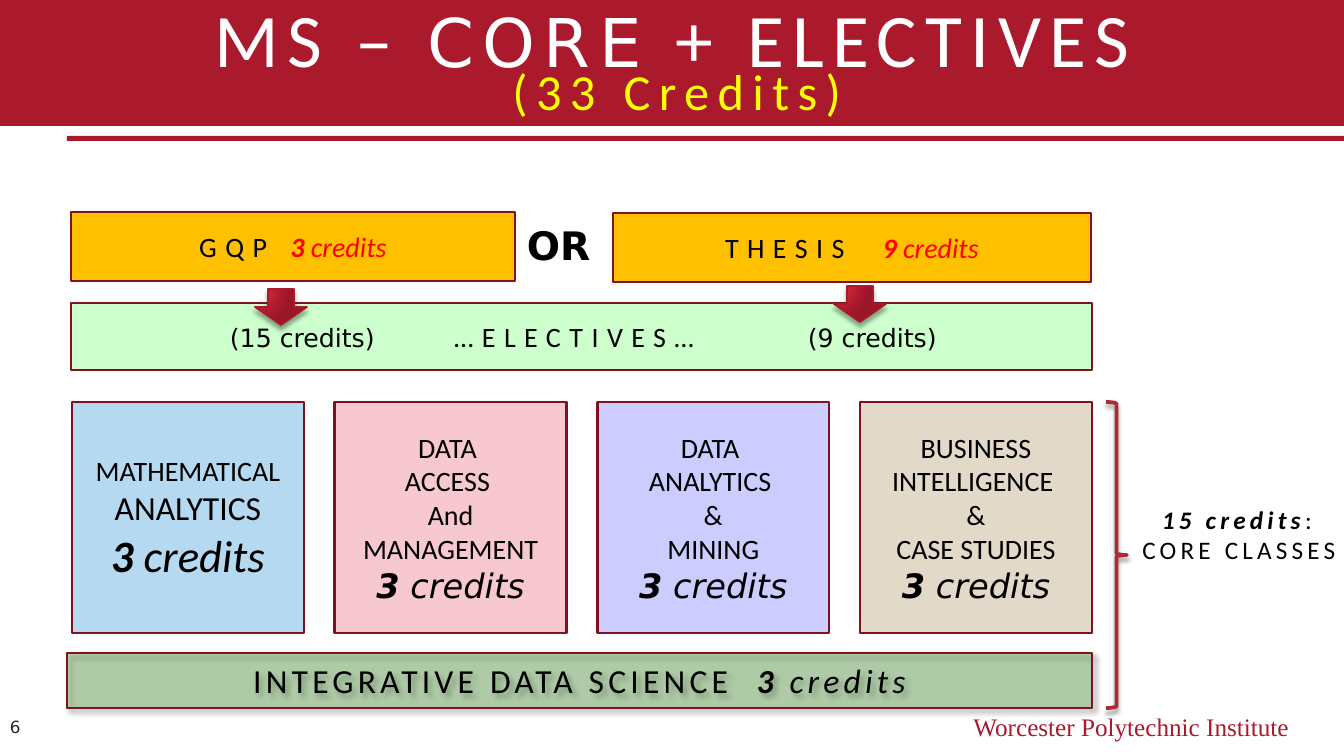
import pptx
import pptx.dml.color
import pptx.enum.shapes
import pptx.enum.text
import pptx.oxml
import pptx.oxml.ns
import pptx.util

RGB = pptx.dml.color.RGBColor
SHAPE = pptx.enum.shapes.MSO_SHAPE
ALIGN = pptx.enum.text.PP_ALIGN
ANCHOR = pptx.enum.text.MSO_ANCHOR
qn = pptx.oxml.ns.qn

CRIMSON = RGB(0xAB, 0x19, 0x2D)
MAROON = RGB(0x7F, 0x12, 0x21)
BRACE_RED = RGB(0xAC, 0x2B, 0x37)
RED = RGB(0xFF, 0x00, 0x00)
YELLOW = RGB(0xFF, 0xFF, 0x00)
AMBER = RGB(0xFF, 0xC0, 0x00)
MINT = RGB(0xCC, 0xFF, 0xCC)
GREEN = RGB(0x28, 0x8B, 0x0D)
SKY = RGB(0xB5, 0xD9, 0xF1)
PINK = RGB(0xF7, 0xC8, 0xCF)
LILAC = RGB(0xCC, 0xCC, 0xFF)
SAND = RGB(0xE2, 0xD9, 0xC9)
BLACK = RGB(0x00, 0x00, 0x00)
WHITE = RGB(0xFF, 0xFF, 0xFF)
GREY = RGB(0x26, 0x26, 0x26)

SANS, WIDE, SERIF = "Calibri", "DejaVu Sans", "Times New Roman"
PX = 914400 / 100.8
SLIDE_W, SLIDE_H = 1344, 756


def run(text, size, font=SANS, color=BLACK, style="", spacing=0):
    """Describe one run; style holds b for bold and i for italic."""
    return text, size, font, color, style, spacing


def credits(number, size, font=SANS, color=BLACK, spacing=0):
    return [run(number, size, font, color, "bi", spacing),
            run(" credits", size, font, color, "i", spacing)]


# Each text is a list of paragraphs, each paragraph a list of runs.
TITLE = [[run("MS – ", 54, SANS, WHITE, "", 6),
          run("CORE", 48, WIDE, WHITE, "", 6),
          run(" + ELECTIVES", 54, SANS, WHITE, "", 6)]]
SUBTITLE = [[run("(33 Credits)", 36, SANS, YELLOW, "", 6)]]
INSTITUTE = [[run("Worcester Polytechnic Institute", 18, SERIF, CRIMSON)]]
CORE_NOTE = [[run("15 credits", 18, style="bi", spacing=3),
              run(": CORE CLASSES", 18, spacing=3)]]

CORES = [
    (SKY, [[run("MATHEMATICAL", 20)], [run("ANALYTICS", 24)], credits("3", 32)]),
] + [
    (color, [[run(line, 20)] for line in lines] + [credits("3", 24, WIDE)])
    for color, lines in [
        (PINK, ["DATA ", "ACCESS ", "And", "MANAGEMENT"]),
        (LILAC, ["DATA ", "ANALYTICS ", "&", "MINING"]),
        (SAND, ["BUSINESS", "INTELLIGENCE ", "&", "CASE STUDIES"]),
    ]
]
CORE_LEFT, CORE_RIGHT, CORE_TOP, CORE_W, CORE_H = 72, 1092, 402, 232, 231

INTEGRATIVE = ((67, 653, 1025, 55), GREEN,
               [[run("INTEGRATIVE DATA SCIENCE  ", 24, spacing=3)]
                + credits("3", 24, spacing=3)])
BARS = [
    ((71, 212, 444, 69), AMBER,
     [[run("GQP ", 20, spacing=6)] + credits("3", 20, color=RED)]),
    ((613, 213, 478, 69), AMBER,
     [[run("THESIS  ", 20, spacing=6)] + credits("9", 20, color=RED)]),
    ((71, 303, 1021, 67), MINT, [[run("…ELECTIVES… ", 20, spacing=6)]]),
]
ARROWS = [(834, 286, 52, 36), (255, 289, 52, 36)]
ARROW_STOPS = [(0, "E3323B"), (76, "AB192D"), (100, "9A1729")]
LABELS = [
    ((517, 216, 90, 57), [[run("OR", 28, WIDE, BLACK, "b")]]),
    ((798, 317, 150, 40), [[run("(9 credits)", 18, WIDE)]]),
    ((220, 317, 166, 40), [[run("(15 credits)", 18, WIDE)]]),
]


def emu(lengths):
    return [round(length * PX) for length in lengths]


def drawing_xml(body):
    return pptx.oxml.parse_xml(body.replace(
        ">", f' {pptx.oxml.ns.nsdecls("a")}>', 1))


def write(shape, paragraphs, align=ALIGN.CENTER, anchor=ANCHOR.TOP, wrap=True):
    frame = shape.text_frame
    frame.word_wrap = wrap
    frame.auto_size = pptx.enum.text.MSO_AUTO_SIZE.NONE
    frame.vertical_anchor = anchor
    for index, runs in enumerate(paragraphs):
        para = frame.add_paragraph() if index else frame.paragraphs[0]
        para.alignment = align
        for text, size, font, color, style, spacing in runs:
            span = para.add_run()
            span.text = text
            span.font.size = pptx.util.Pt(size)
            span.font.name = font
            span.font.color.rgb = color
            span.font.bold = "b" in style
            span.font.italic = "i" in style
            if spacing:
                span.font._element.set("spc", str(spacing * 100))


def add_text(slide, place, paragraphs, **layout):
    box = slide.shapes.add_textbox(*emu(place))
    write(box, paragraphs, **layout)


def add_shape(slide, kind, place, fill=None, line=None, width=1.75):
    shape = slide.shapes.add_shape(kind, *emu(place))
    shape.shadow.inherit = False
    if fill is None:
        shape.fill.background()
    else:
        shape.fill.solid()
        shape.fill.fore_color.rgb = fill
    if line is None:
        shape.line.fill.background()
    else:
        shape.line.color.rgb = line
        shape.line.width = pptx.util.Pt(width)
    return shape


def add_block(slide, place, fill, paragraphs):
    block = add_shape(slide, SHAPE.RECTANGLE, place, fill, MAROON)
    write(block, paragraphs, anchor=ANCHOR.MIDDLE)
    return block


def add_shadow(shape, opacity, blur, distance, angle):
    effects = shape._element.spPr.find(qn("a:effectLst"))
    effects.append(drawing_xml(
        f'<a:outerShdw blurRad="{blur * 12700}" dist="{distance * 12700}" '
        f'dir="{angle * 60000}" rotWithShape="0"><a:srgbClr val="000000">'
        f'<a:alpha val="{opacity * 1000}"/></a:srgbClr></a:outerShdw>'))


def add_arrow(slide, place):
    arrow = add_shape(slide, SHAPE.DOWN_ARROW, place, None, CRIMSON, 1.25)
    stops = "".join(f'<a:gs pos="{pos * 1000}"><a:srgbClr val="{color}"/></a:gs>'
                    for pos, color in ARROW_STOPS)
    properties = arrow._element.spPr
    properties.replace(properties.find(qn("a:noFill")), drawing_xml(
        f'<a:gradFill><a:gsLst>{stops}</a:gsLst><a:path path="circle">'
        '<a:fillToRect l="15000" t="15000" r="100000" b="100000"/>'
        '</a:path></a:gradFill>'))
    add_shadow(arrow, 35, 3, 3, 90)


def main():
    deck = pptx.Presentation()
    deck.slide_width, deck.slide_height = emu((SLIDE_W, SLIDE_H))
    slide = deck.slides.add_slide(deck.slide_layouts[5])

    add_shape(slide, SHAPE.RECTANGLE, (67, 136, 1277, 5), CRIMSON)
    add_text(slide, (806, 706, 493, 40), INSTITUTE, align=ALIGN.RIGHT)
    add_shape(slide, SHAPE.RECTANGLE, (0, 0, SLIDE_W, 126), CRIMSON)

    pitch = (CORE_RIGHT - CORE_LEFT - CORE_W) / (len(CORES) - 1)
    for index, (color, paragraphs) in enumerate(CORES):
        place = (CORE_LEFT + index * pitch, CORE_TOP, CORE_W, CORE_H)
        add_block(slide, place, color, paragraphs)

    brace = add_shape(slide, SHAPE.RIGHT_BRACE, (1106, 402, 21, 306),
                      None, BRACE_RED, 2.75)
    add_shadow(brace, 35, 3, 3, 90)
    add_text(slide, (1127, 499, 224, 72), CORE_NOTE)

    title = slide.shapes.title
    title.left, title.top, title.width, title.height = emu((0, -13, SLIDE_W, 102))
    write(title, TITLE)
    slide.shapes._spTree.append(title._element)  # in front of the header band
    add_text(slide, (0, 705, 67, 43), [[run("6", 12, WIDE, GREY)]],
             align=ALIGN.LEFT, anchor=ANCHOR.MIDDLE)

    integrative = add_block(slide, *INTEGRATIVE)
    tint = integrative._element.spPr.find(qn("a:solidFill")).find(qn("a:srgbClr"))
    tint.append(drawing_xml('<a:alpha val="28000"></a:alpha>'))
    add_shadow(integrative, 40, 4, 3, 45)
    add_text(slide, (5, 55, SLIDE_W, 72), SUBTITLE)

    for bar in BARS:
        add_block(slide, *bar)
    for place in ARROWS:
        add_arrow(slide, place)
    for place, paragraphs in LABELS:
        add_text(slide, place, paragraphs, align=ALIGN.LEFT, wrap=False)

    deck.save("out.pptx")


if __name__ == "__main__":
    main()
